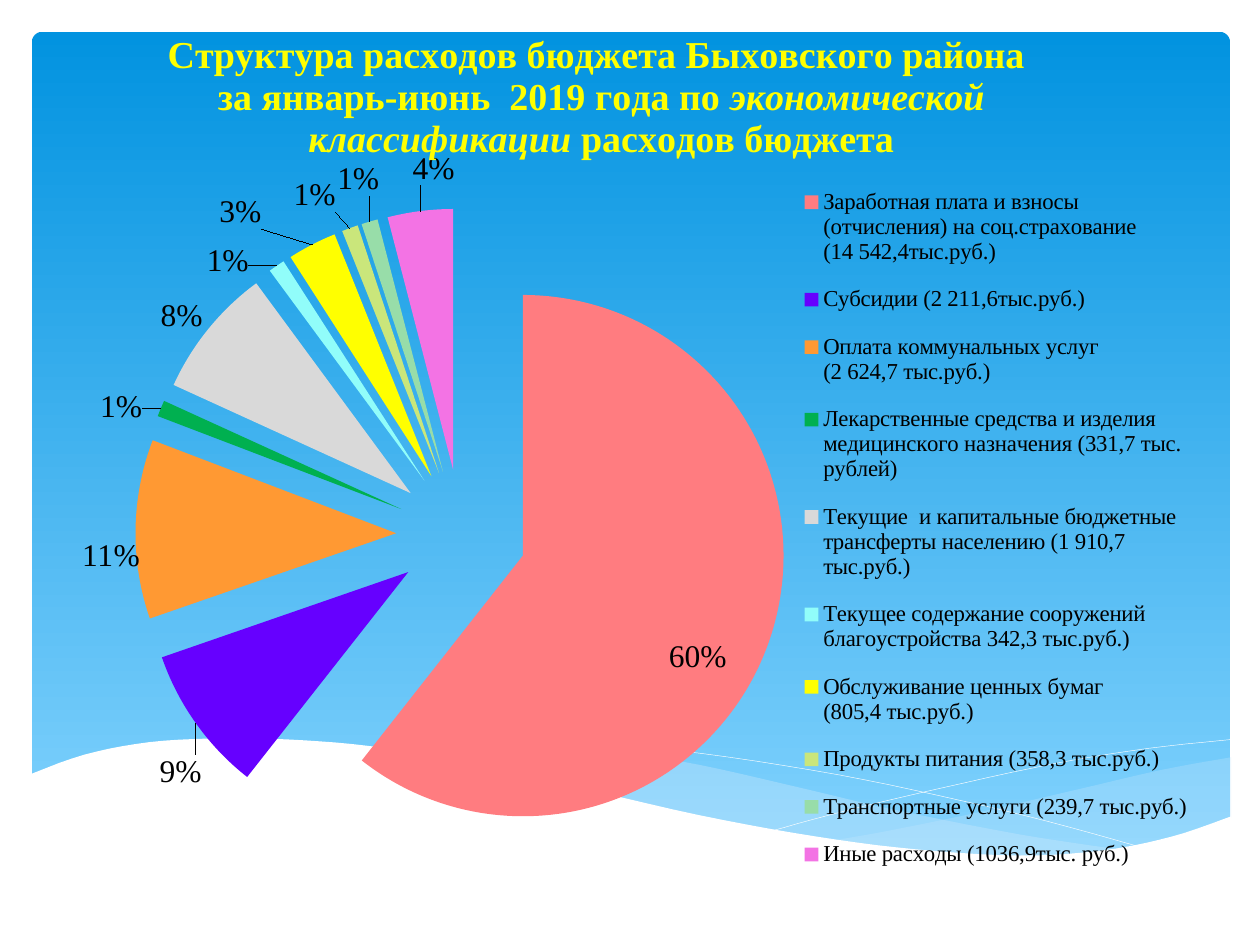
from lxml import etree
from pptx import Presentation, util as u
from pptx.chart.data import CategoryChartData
from pptx.dml.color import RGBColor
from pptx.enum import chart as ch, shapes
from pptx.oxml import parse_xml
from pptx.oxml.ns import qn, nsdecls

SERIF = "Times New Roman"

# Legend text, share in percent, colour, label shift
COSTS = [
    ("Заработная плата и взносы (отчисления) на соц.страхование\n(14 542,4тыс.руб.)",
     60, "FF7C80", (-0.03, 0.04)),
    ("Субсидии (2 211,6тыс.руб.)", 9, "6600FF", (0.01, 0.03)),
    ("Оплата коммунальных услуг\n(2 624,7 тыс.руб.)", 11, "FF9933", (0.01, 0.03)),
    ("Лекарственные средства и изделия медицинского назначения (331,7 тыс. рублей)",
     1, "00B050", (-0.01, 0.02)),
    ("Текущие  и капитальные бюджетные трансферты населению (1 910,7 тыс.руб.)",
     8, "D9D9D9", (0, 0.01)),
    ("Текущее содержание сооружений благоустройства 342,3 тыс.руб.)",
     1, "91FDFA", (-0.02, 0.02)),
    ("Обслуживание ценных бумаг\n(805,4 тыс.руб.)", 3, "FFFF00", (-0.04, -0.01)),
    ("Продукты питания (358,3 тыс.руб.)", 1, "CAE67B", (-0.01, -0.01)),
    ("Транспортные услуги (239,7 тыс.руб.)", 1, "98DDA9", (0.01, -0.02)),
    ("Иные расходы (1036,9тыс. руб.)", 4, "F373E4", (0.03, -0.02)),
]

# Wave edges: knots on a grid of 2.54 cm
RIGHT = [[(9.77, 6.01), (9.22, 6.11), (8.62, 6.25), (7.8, 6.44), (7.07, 6.59), (6.62, 6.67)],
         [(6.62, 6.67), (7.19, 6.74), (7.82, 6.79), (8.45, 6.79), (8.98, 6.72),
          (9.37, 6.63), (9.77, 6.49)]]
MIDDLE = [[(8.94, 6.75), (8.08, 6.62), (7.07, 6.42), (6.3, 6.24), (5.55, 6.07),
           (4.89, 5.96), (4.2, 5.89), (3.62, 5.87), (2.87, 5.93)],
          [(2.87, 5.93), (3.63, 6.04), (4.5, 6.24), (5.3, 6.42), (6.19, 6.6),
           (6.96, 6.72), (7.62, 6.79), (8.29, 6.8), (8.94, 6.75)]]
FALL = [[(3.1, 5.97), (3.53, 5.91), (4.02, 5.89), (4.69, 5.9), (5.57, 5.98),
         (6.66, 6.15), (7.61, 6.35), (8.32, 6.52), (9.08, 6.73)]]
RISE = [[(6.14, 6.59), (6.73, 6.43), (7.49, 6.25), (8.37, 6.06), (9.11, 5.94), (9.76, 5.87)]]
FRONT = [[(9.77, 6.48), (9.3, 6.64), (8.75, 6.75), (8.09, 6.79), (7.26, 6.74), (6.48, 6.64),
          (5.55, 6.47), (4.47, 6.22), (3.65, 6.04), (2.92, 5.92), (2.3, 5.87), (1.77, 5.86),
          (1.19, 5.89), (0.67, 5.99), (0.23, 6.15)],
         [(0.23, 7.31), (9.77, 7.31)]]


def rgb(code):
    return RGBColor.from_string(code)


def smooth(knots, steps=5):
    """Points of a Catmull-Rom curve through the knots."""
    ends = [knots[0], *knots, knots[-1]]
    out = [knots[0]]
    for a, b, c, d in zip(ends, ends[1:], ends[2:], ends[3:]):
        for n in range(1, steps + 1):
            t = n / steps
            out.append(tuple(
                (2 * q + (r - p) * t + (2 * p - 5 * q + 4 * r - s) * t ** 2
                 + (3 * q - p - 3 * r + s) * t ** 3) / 2
                for p, q, r, s in zip(a, b, c, d)))
    return out


def layout(x, y, w=None, h=None, edge=True, inner=False):
    """Manual layout of a chart part, in shares of the chart."""
    tags = [("layoutTarget", "inner")] if inner else []
    tags += [("xMode", "edge"), ("yMode", "edge")] if edge else []
    tags += [(k, v) for k, v in zip("xywh", (x, y, w, h)) if v is not None]
    body = "".join(f'<c:{k} val="{v}"/>' for k, v in tags)
    return parse_xml(f'<c:layout {nsdecls("c")}><c:manualLayout>{body}'
                     '</c:manualLayout></c:layout>')


def place(part, after, new):
    """Put a layout behind the named child, or first if there is none."""
    for old in part.findall(qn("c:layout")):
        part.remove(old)
    prev = part.find(qn(after)) if after else None
    part.insert(0 if prev is None else part.index(prev) + 1, new)


class Deck:
    def __init__(self):
        self.prs = Presentation()
        self.prs.slide_width, self.prs.slide_height = u.Cm(25.4), u.Cm(19.05)
        self.slide = self.prs.slides.add_slide(self.prs.slide_layouts[6])

    def panel(self, x, y, w, h, top, low):
        box = self.slide.shapes.add_shape(shapes.MSO_SHAPE.ROUNDED_RECTANGLE,
                                          u.Cm(x), u.Cm(y), u.Cm(w), u.Cm(h))
        box.adjustments[0] = 0.013
        box.shadow.inherit = False
        box.line.fill.background()
        box.fill.gradient()
        box.fill.gradient_angle = 270
        for stop, code in zip(box.fill.gradient_stops, (top, low)):
            stop.color.rgb = rgb(code)

    def wave(self, edges, fill=None, alpha=100):
        fine = 1000  # whole local units per grid step
        pts = [(x * fine, y * fine) for edge in edges
               for x, y in (smooth(edge) if len(edge) > 2 else edge)]
        pen = self.slide.shapes.build_freeform(*pts[0], scale=u.Cm(2.54) / fine)
        pen.add_line_segments(pts[1:], close=bool(fill))
        form = pen.convert_to_shape()
        form.shadow.inherit = False
        if fill:
            form.line.fill.background()
            form.fill.solid()
            form.fill.fore_color.rgb = rgb(fill)
            if alpha < 100:
                clr = form.fill._xPr.find(".//" + qn("a:srgbClr"))
                etree.SubElement(clr, qn("a:alpha"), val=str(alpha * 1000))
        else:
            form.fill.background()
            form.line.color.rgb = rgb("FFFFFF")
            form.line.width = u.Pt(0.25)

    def font(self, font, size, code="000000", name=SERIF, bold=False):
        font.size, font.name, font.bold = u.Pt(size), name, bold
        font.color.rgb = rgb(code)

    def pie(self, x, y, w, h, rows):
        data = CategoryChartData(number_format="General")
        data.categories = [row[0] for row in rows]
        data.add_series("Series 1", [row[1] for row in rows])
        chart = self.slide.shapes.add_chart(ch.XL_CHART_TYPE.PIE, u.Cm(x), u.Cm(y),
                                            u.Cm(w), u.Cm(h), data).chart
        self.font(chart.font, 18, name="Calibri")
        plot = chart.plots[0]
        plot.vary_by_categories = True
        ser = plot.series[0]
        burst = parse_xml(f'<c:explosion {nsdecls("c")} val="25"/>')
        ser._element.find(qn("c:tx")).addnext(burst)
        place(chart._chartSpace.chart.plotArea, None,
              layout(0.069, 0.196, 0.552, 0.755, inner=True))

        # Labels
        tags = ser.data_labels
        tags.show_value = True
        tags.number_format, tags.number_format_is_linked = '0"%"', False
        tags.position = ch.XL_LABEL_POSITION.OUTSIDE_END
        self.font(tags.font, 18)
        lead = tags._element.find(qn("c:showLeaderLines"))
        if lead is None:
            lead = etree.SubElement(tags._element, qn("c:showLeaderLines"))
        lead.set("val", "1")

        # Slices
        for n, (_, _, code, shift) in enumerate(rows):
            point = ser.points[n]
            point.format.fill.solid()
            point.format.fill.fore_color.rgb = rgb(code)
            point.format.line.fill.background()
            tag = point.data_label
            self.font(tag.font, 18)
            tag.position = (ch.XL_LABEL_POSITION.OUTSIDE_END if n
                            else ch.XL_LABEL_POSITION.INSIDE_END)
            item = tag._dLbl
            item.find(qn("c:idx")).addnext(parse_xml(
                f'<c:numFmt {nsdecls("c")} formatCode="0&quot;%&quot;" sourceLinked="0"/>'))
            place(item, "c:idx", layout(*shift, edge=False))
        return chart

    def title(self, chart, lines, size, code, x, y):
        frame = chart.chart_title.text_frame
        for n, runs in enumerate(lines):
            par = frame.add_paragraph() if n else frame.paragraphs[0]
            self.font(par.font, size, code, bold=True)
            for words, slant in runs:
                run = par.add_run()
                run.text = words
                self.font(run.font, size, code, bold=True)
                run.font.italic = slant
        chart.chart_title.include_in_layout = False
        place(chart.chart_title._element, "c:tx", layout(x, y))

    def legend(self, chart, size, *area):
        chart.has_legend = True
        key = chart.legend
        key.position = ch.XL_LEGEND_POSITION.RIGHT
        key.include_in_layout = False
        self.font(key.font, size)
        place(key._element, "c:legendPos", layout(*area))


def main():
    deck = Deck()
    # Backdrop
    deck.panel(0.64, 0.64, 24.16, 16.76, "0293E0", "83D3FE")
    deck.wave(RIGHT, "C6E7FC", 29)
    deck.wave(MIDDLE, "C6E7FC", 40)
    deck.wave(FALL)
    deck.wave(RISE)
    deck.wave(FRONT, "FFFFFF")
    # Chart with its title and legend
    pie = deck.pie(1.09, 0.33, 23.8, 18.21, COSTS)
    deck.title(pie, [[("Структура расходов бюджета Быховского района ", False)],
                     [("за январь-июнь  2019 года по ", False),
                      ("экономической классификации", True),
                      (" расходов бюджета", False)]], 21.7, "FFFF00", 0.093, 0.013)
    deck.legend(pie, 13, 0.63, 0.167, 0.335, 0.8)
    deck.prs.save("out.pptx")


if __name__ == "__main__":
    main()
